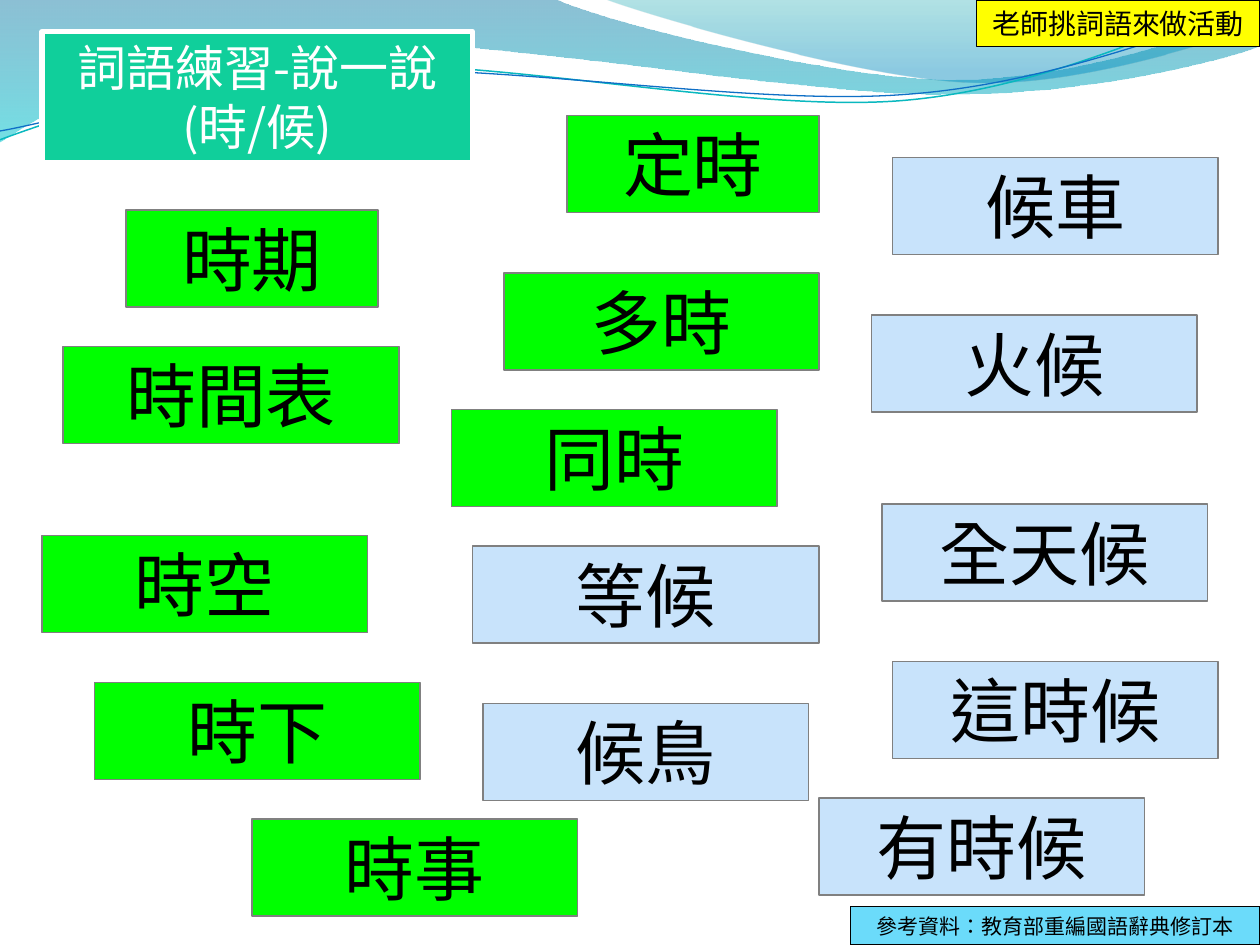
import pptx
import pptx.dml.color
import pptx.enum.shapes
import pptx.enum.text
import pptx.oxml.ns
import pptx.util
from lxml import etree

Pt = pptx.util.Pt
qn = pptx.oxml.ns.qn
AutoSize = pptx.enum.text.MSO_AUTO_SIZE

COLORS = {
    "black": "000000", "white": "FFFFFF", "gray": "808080",
    "green": "00FF00", "pale": "C8E3FB", "teal": "10CF9B",
    "yellow": "FFFF00", "sky": "6BDBFA",
    "ocean": "0074A1", "aqua": "00C6CF", "sea": "00A1A9", "blue": "008BBF",
    "teal line": "0AB8BF", "blue line": "0F6FC6",
}
FONT = "Noto Sans CJK SC"
LANGUAGE = "zh-TW"

# Path segments: two numbers are a straight line, six a Bezier curve
WAVES = [
    # (start, segments, gradient stops as (position, color, opacity))
    ((0, 0),
     [(316.8, -0.7), (342.7, 12.2, 478.1, 45.4, 545.8, 45.4),
      (614.2, 45.4, 689.8, 18.7, 720, 6.5), (720.7, 25.9),
      (707.8, 31.7, 626.4, 54.7, 537.1, 54), (447.8, 54, 275, 20.2, 185, 24.5),
      (92.9, 25.9, 33.1, 59.8, -0.7, 81.4), (0, 0)],
     [(0, "ocean", 45), (1, "aqua", 55)]),
    ((344.9, -0.7),
     [(366.5, 7.9, 491, 44.6, 553.7, 46.8),
      (616.3, 49.7, 691.9, 23, 720, 15.1), (720, 0), (344.9, -0.7)],
     [(0, "sea", 30), (0.8, "blue", 45)]),
]
RIPPLE_ROTATION = 357.3
RIPPLES = [
    # (start, segments, color, line width), before rotation
    ((-1.4, 62.9),
     [(33.7, 51.6, 114.1, 29.4, 199.8, 29.9),
      (284.8, 30.3, 425.8, 67.2, 512.4, 64.9),
      (599.1, 62.4, 676.5, 25.7, 720.2, 15.6)], "teal line", 0.85),
    ((-1.2, 57.9),
     [(32.9, 53.7, 118.3, 32.6, 204, 33),
      (290.5, 33.5, 428.9, 63.8, 515.5, 61.4),
      (601.4, 59.6, 678.4, 30.1, 721.3, 21.3)], "blue line", 0.75),
]

# Word cards: (word, left, top, width, color)
WORDS = [
    ("多時", 288, 156, 180, "green"),
    ("時空", 24, 306, 186, "green"),
    ("時期", 72, 120, 144, "green"),
    ("時間表", 36, 198, 192, "green"),
    ("等候", 270, 312, 198, "pale"),
    ("時下", 54, 390, 186, "green"),
    ("有時候", 468, 456, 186, "pale"),
    ("時事", 144, 468, 186, "green"),
    ("定時", 324, 66, 144, "green"),
    ("候車", 510, 90, 186, "pale"),
    ("候鳥", 276, 402, 186, "pale"),
    ("同時", 258, 234, 186, "green"),
    ("全天候", 504, 288, 186, "pale"),
    ("火候", 498, 180, 186, "pale"),
    ("這時候", 510, 378, 186, "pale"),
]
WORD_HEIGHT = 55.5


def rgb(name):
    return pptx.dml.color.RGBColor.from_string(COLORS[name])


class SlideBuilder:
    def __init__(self, slide, font, language):
        self.slide = slide
        self.font = font
        self.language = language

    def outline(self, start, segments, close):
        points = [(Pt(x), Pt(y)) for segment in segments
                  for x, y in zip(segment[::2], segment[1::2])]
        builder = self.slide.shapes.build_freeform(
            Pt(start[0]), Pt(start[1]), scale=1.0)
        builder.add_line_segments(points, close=close)
        shape = builder.convert_to_shape()
        shape.shadow.inherit = False
        # Turn each group of three points into one Bezier curve
        lines = iter(list(shape.element.iter(qn("a:lnTo"))))
        for segment in segments:
            group = [next(lines) for _ in range(len(segment) // 2)]
            if len(group) == 3:
                curve = etree.Element(qn("a:cubicBezTo"))
                group[0].addprevious(curve)
                for line in group:
                    curve.append(line[0])
                    line.getparent().remove(line)
        return shape

    def wave(self, start, segments, stops):
        shape = self.outline(start, segments, True)
        shape.line.fill.background()
        shape.fill.gradient()
        shape.fill.gradient_angle = 270
        for stop, (position, color, _) in zip(shape.fill.gradient_stops, stops):
            stop.position = position
            stop.color.rgb = rgb(color)
        stop_colors = shape.element.spPr.iter(qn("a:srgbClr"))
        for element, (_, _, opacity) in zip(stop_colors, stops):
            etree.SubElement(element, qn("a:alpha"), val=str(opacity * 1000))

    def ripple(self, start, segments, color, width):
        shape = self.outline(start, segments, False)
        shape.rotation = RIPPLE_ROTATION
        shape.fill.background()
        shape.line.color.rgb = rgb(color)
        shape.line.width = Pt(width)

    def style(self, shape, text, size, fill, line, line_width=0.75,
              color="black", auto_size=AutoSize.SHAPE_TO_FIT_TEXT):
        shape.shadow.inherit = False
        shape.fill.solid()
        shape.fill.fore_color.rgb = rgb(fill)
        shape.line.color.rgb = rgb(line)
        shape.line.width = Pt(line_width)
        frame = shape.text_frame
        frame.text = text
        frame.word_wrap = True
        frame.auto_size = auto_size
        frame.vertical_anchor = pptx.enum.text.MSO_ANCHOR.TOP
        paragraph = frame.paragraphs[0]
        paragraph.alignment = pptx.enum.text.PP_ALIGN.CENTER
        run = paragraph.runs[0]
        run.font.size = Pt(size)
        run.font.name = self.font
        run.font.color.rgb = rgb(color)
        # East Asian font and language
        properties = run.font._element
        properties.set("lang", self.language)
        etree.SubElement(properties, qn("a:ea"), typeface=self.font)

    def box(self, text, left, top, width, height, size, fill, line):
        shape = self.slide.shapes.add_shape(
            pptx.enum.shapes.MSO_SHAPE.RECTANGLE,
            Pt(left), Pt(top), Pt(width), Pt(height))
        self.style(shape, text, size, fill, line)

    def title(self, text, left, top, width, height, size):
        shape = self.slide.shapes.title
        shape.left, shape.top = Pt(left), Pt(top)
        shape.width, shape.height = Pt(width), Pt(height)
        self.style(shape, text, size, "teal", "white", 3, "white", AutoSize.NONE)
        # Bring the title in front of the waves
        shape.element.getparent().append(shape.element)


def main():
    presentation = pptx.Presentation()
    presentation.slide_width, presentation.slide_height = Pt(720), Pt(540)
    slide = presentation.slides.add_slide(presentation.slide_layouts[5])
    builder = SlideBuilder(slide, FONT, LANGUAGE)

    # Wavy header
    for wave in WAVES:
        builder.wave(*wave)
    for ripple in RIPPLES:
        builder.ripple(*ripple)

    # Title
    builder.title("詞語練習-說一說(時/候)", 24, 18, 246, 75, 28)

    # Word cards
    for word, left, top, width, color in WORDS:
        builder.box(word, left, top, width, WORD_HEIGHT, 40, color, "gray")

    # Teacher's note and reference
    builder.box("老師挑詞語來做活動", 558, 0, 162, 26.5, 16, "yellow", "black")
    builder.box("參考資料：教育部重編國語辭典修訂本", 486, 518.2, 234, 21.8, 12, "sky", "black")

    presentation.save("out.pptx")


if __name__ == "__main__":
    main()
